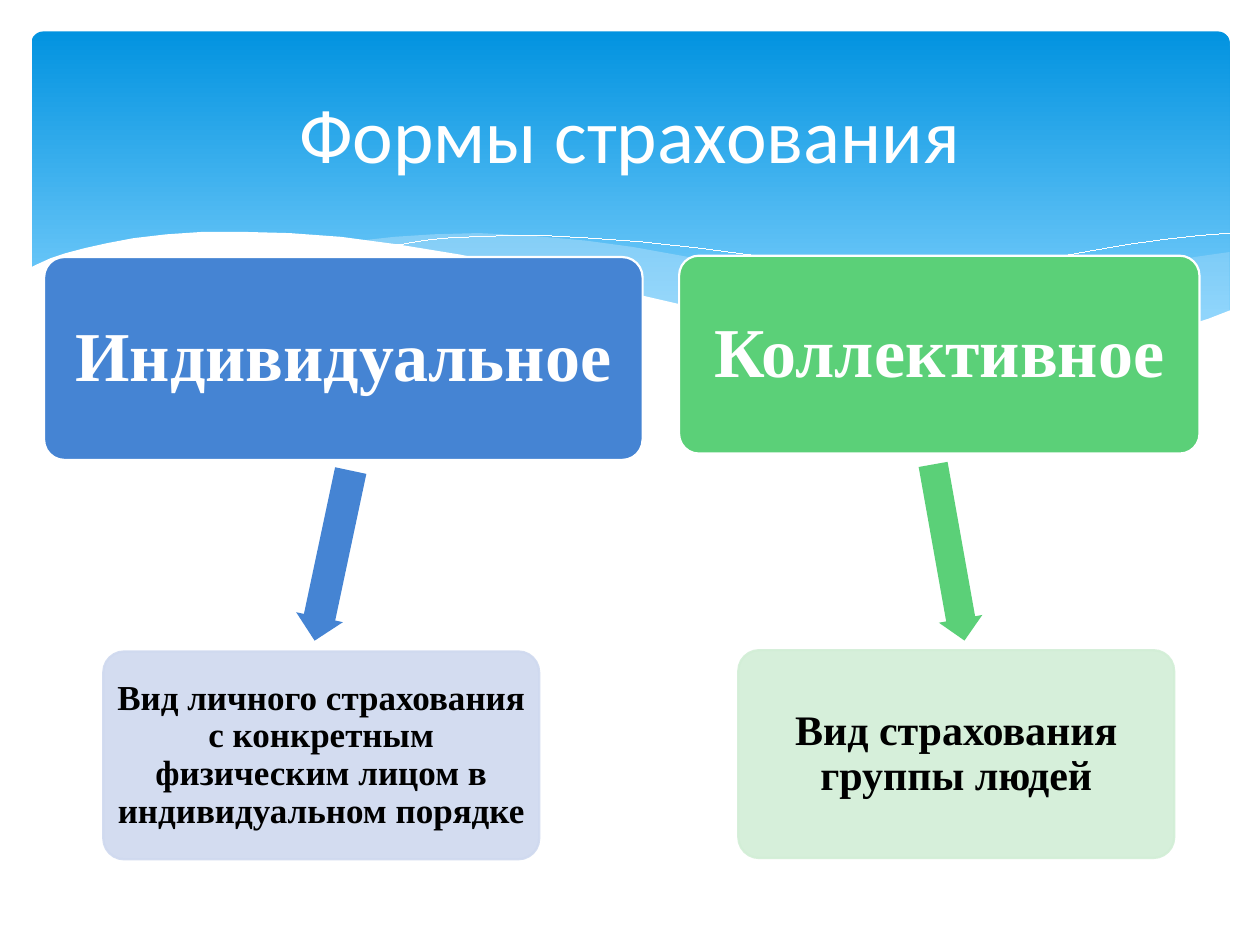
from lxml import etree
from pptx import Presentation
from pptx import util as u
from pptx.dml.color import RGBColor
from pptx.enum import shapes, text
from pptx.oxml.ns import qn

In = u.Inches
WHITE = RGBColor(0xFF, 0xFF, 0xFF)
BLACK = RGBColor(0, 0, 0)
SKY_TOP = RGBColor(0x02, 0x93, 0xE0)
SKY_BOTTOM = RGBColor(0x83, 0xD3, 0xFE)
MIST = RGBColor(0xC6, 0xE7, 0xFC)
BLUE = RGBColor(0x45, 0x84, 0xD3)
PALE_BLUE = RGBColor(0xCF, 0xD9, 0xEF)
GREEN = RGBColor(0x5B, 0xD0, 0x78)
PALE_GREEN = RGBColor(0xD2, 0xEE, 0xD6)

# Wave outlines, in inches from the corner of the banner
RIGHT_WAVE = [
    (9.51, 1.75), (9.23, 1.79), (8.96, 1.85), (8.66, 1.91), (8.36, 1.98),
    (7.8, 2.12), (7.28, 2.23), (6.81, 2.32), (6.36, 2.4), (6.66, 2.44),
    (7.07, 2.49), (7.44, 2.52), (7.78, 2.53), (8.1, 2.52), (8.38, 2.5),
    (8.64, 2.47), (8.88, 2.42), (9.1, 2.37), (9.24, 2.32), (9.51, 2.22)]
MIDDLE_WAVE = [
    (8.68, 2.48), (8.12, 2.4), (7.5, 2.29), (6.81, 2.15), (6.04, 1.97),
    (5.59, 1.86), (5.16, 1.78), (4.77, 1.71), (4.4, 1.66), (3.95, 1.62),
    (3.55, 1.6), (3.19, 1.61), (2.88, 1.63), (2.61, 1.66), (2.98, 1.71),
    (3.37, 1.78), (3.79, 1.86), (4.24, 1.97), (5.05, 2.15), (5.76, 2.3),
    (6.4, 2.41), (6.97, 2.49), (7.48, 2.52), (7.93, 2.53), (8.32, 2.52)]
LEFT_CREST = [
    (2.84, 1.7), (2.93, 1.69), (3.1, 1.66), (3.28, 1.64), (3.49, 1.63),
    (3.76, 1.62), (4.08, 1.62), (4.44, 1.64), (4.85, 1.67), (5.31, 1.72),
    (5.83, 1.79), (6.4, 1.88), (7.02, 2.01), (7.7, 2.16), (8.44, 2.36),
    (8.82, 2.47)]
RIGHT_CREST = [
    (5.88, 2.32), (6.28, 2.21), (6.7, 2.1), (7.23, 1.98), (7.81, 1.85),
    (8.41, 1.74), (8.7, 1.69), (8.99, 1.65), (9.26, 1.62), (9.51, 1.6)]
WHITE_WAVE = [
    (9.52, 2.21), (9.34, 2.28), (9.15, 2.34), (8.95, 2.4), (8.74, 2.44),
    (8.5, 2.48), (8.25, 2.5), (7.98, 2.52), (7.68, 2.51), (7.36, 2.5),
    (7.01, 2.47), (6.63, 2.43), (6.23, 2.37), (5.78, 2.29), (5.3, 2.2),
    (4.78, 2.08), (4.22, 1.95), (3.93, 1.88), (3.4, 1.77), (2.91, 1.69),
    (2.46, 1.63), (2.05, 1.6), (1.68, 1.59), (1.36, 1.59), (1.07, 1.61),
    (0.81, 1.64), (0.6, 1.68), (0.42, 1.72), (0.27, 1.76), (0.15, 1.8),
    (0.04, 1.85), (-0.02, 1.88), (-0.02, 3.04), (9.52, 3.04)]


def set_alpha(element, percent):
    """Make every solid colour below the element partly transparent."""
    for clr in element.iter(qn("a:srgbClr")):
        etree.SubElement(clr, qn("a:alpha")).set("val", str(percent * 1000))


def add_wave(s, x, y, points, color, alpha=None, closed=True):
    pts = [(In(x + px), In(y + py)) for px, py in points]
    fb = s.shapes.build_freeform(*pts[0])
    fb.add_line_segments(pts[1:], close=closed)
    sp = fb.convert_to_shape()
    sp.shadow.inherit = False
    if closed:
        sp.fill.solid()
        sp.fill.fore_color.rgb = color
        sp.line.fill.background()
    else:
        sp.fill.background()
        sp.line.color.rgb = color
        sp._element.spPr.find(qn("a:ln")).set("w", "0")  # hairline
    if alpha:
        set_alpha(sp._element.spPr, alpha)


def write(sp, words, font, size, color, bold=False, inset=0.1):
    tf = sp.text_frame
    tf.word_wrap = True
    tf.vertical_anchor = text.MSO_ANCHOR.MIDDLE
    tf.margin_left = tf.margin_right = tf.margin_top = tf.margin_bottom = In(inset)
    tf.text = words
    p = tf.paragraphs[0]
    p.alignment = text.PP_ALIGN.CENTER
    f = p.runs[0].font
    f.name, f.size, f.bold = font, u.Pt(size), bold
    f.color.rgb = color
    return p


def add_shape(s, kind, box, fill, line=None):
    sp = s.shapes.add_shape(kind, *map(In, box))
    sp.shadow.inherit = False
    sp.fill.solid()
    sp.fill.fore_color.rgb = fill
    if line is None:
        sp.line.fill.background()
    else:
        sp.line.color.rgb = line
        sp.line.width = u.Pt(1.25)
    return sp


def add_card(s, box, words, size, fill, line, color, inset):
    sp = add_shape(s, shapes.MSO_SHAPE.ROUNDED_RECTANGLE, box, fill, line)
    sp.adjustments[0] = 0.1
    write(sp, words, "Times New Roman", size, color, True, inset).line_spacing = 0.9
    return sp


def add_banner(s, x, y, w, h, title):
    # Sky gradient
    sp = add_shape(s, shapes.MSO_SHAPE.ROUNDED_RECTANGLE, (x, y, w, h), SKY_TOP)
    sp.adjustments[0] = 0.034
    sp.fill.gradient()
    sp.fill.gradient_angle = 270
    for stop, color, pos in zip(sp.fill.gradient_stops, (SKY_TOP, SKY_BOTTOM), (0, 0.9)):
        stop.color.rgb = color
        stop.position = pos
    # Waves
    add_wave(s, x, y, RIGHT_WAVE, MIST, 29)
    add_wave(s, x, y, MIDDLE_WAVE, MIST, 40)
    for crest in (LEFT_CREST, RIGHT_CREST):
        add_wave(s, x, y, crest, WHITE, closed=False)
    add_wave(s, x, y, WHITE_WAVE, WHITE)
    # Title
    tb = s.shapes.add_textbox(In(x + 0.25), In(y + 0.12), In(9), In(1.37))
    write(tb, title, "Calibri", 44, WHITE)


def add_form(s, x, y, w, h, name, note, note_size, note_dx, arrow, color, pale):
    """One form of insurance: heading, arrow and explanation."""
    add_card(s, (x, y, w, h), name, 40, color, WHITE, WHITE, 0.06)

    dx, dy, length, thickness, angle = arrow
    sp = add_shape(s, shapes.MSO_SHAPE.RIGHT_ARROW,
                   (x + dx, y + dy, length, thickness), color)
    sp.adjustments[0], sp.adjustments[1] = 0.667, 0.5
    sp.rotation = angle

    sp = add_card(s, (x + note_dx, y + 3.13, 3.46, 1.65), note, note_size,
                  pale, pale, BLACK, 0.03)
    set_alpha(sp._element.spPr, 90)


def main():
    prs = Presentation()
    prs.slide_width, prs.slide_height = In(10), In(7.5)
    s = prs.slides.add_slide(prs.slide_layouts[6])
    add_banner(s, 0.25, 0.25, 9.51, 2.7, "Формы страхования")
    add_form(s, 0.35, 2.04, 4.75, 1.61, "Индивидуальное",
             "Вид личного страхования с конкретным физическим лицом "
             "в индивидуальном порядке", 20, 0.47,
             (1.6, 2.18, 1.38, 0.38, 102), BLUE, PALE_BLUE)
    add_form(s, 5.39, 2.03, 4.13, 1.57, "Коллективное",
             "Вид страхования группы людей", 24, 0.47,
             (1.43, 2.18, 1.42, 0.35, 79.9), GREEN, PALE_GREEN)
    prs.save("out.pptx")


if __name__ == "__main__":
    main()
